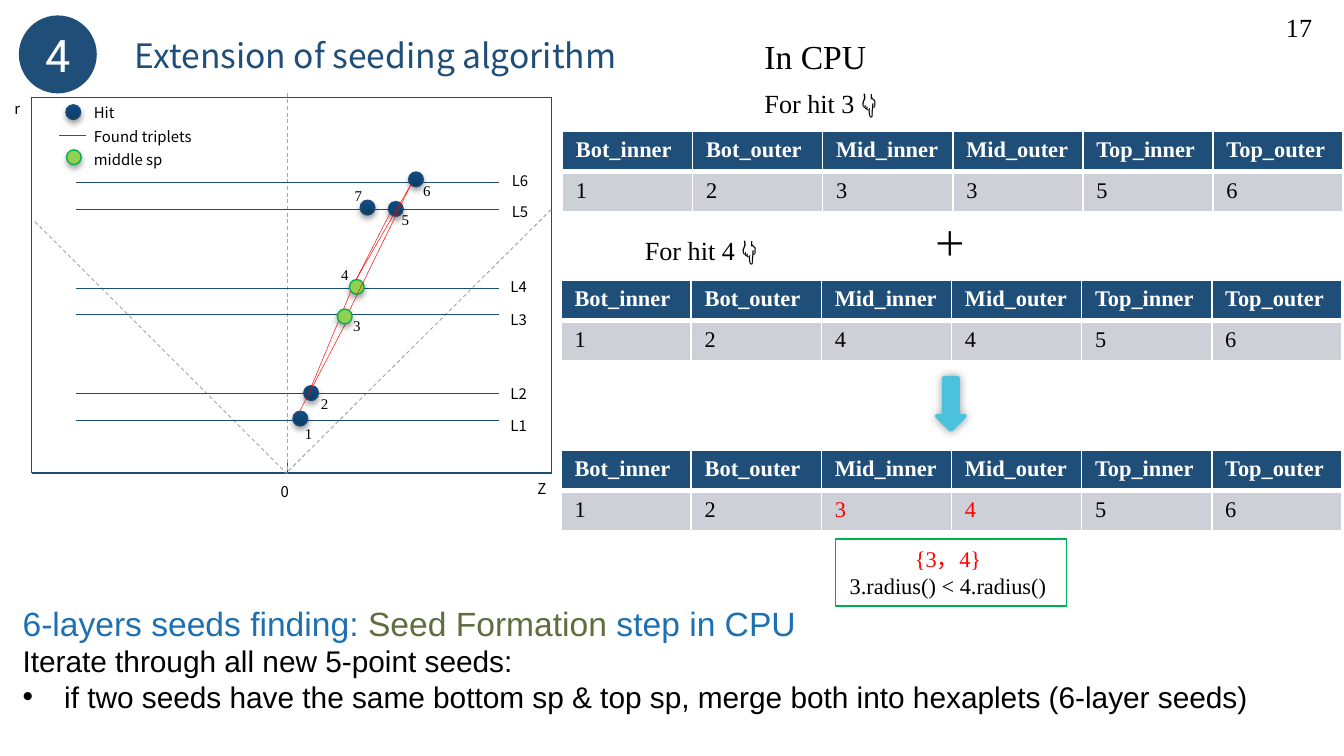
from dataclasses import dataclass

from lxml.etree import SubElement
from pptx import Presentation
from pptx.dml.color import RGBColor
from pptx.enum.dml import MSO_LINE
from pptx.enum.shapes import MSO_CONNECTOR, MSO_SHAPE
from pptx.enum.text import MSO_ANCHOR, MSO_AUTO_SIZE, PP_ALIGN
from pptx.oxml.ns import qn
from pptx.util import Inches, Pt


@dataclass(frozen=True)
class Theme:
    navy: str = "1F4E78"
    line: str = "1C4C78"
    hit_dark: str = "0D3B64"
    hit_light: str = "0F4D84"
    lime: str = "92D050"
    green: str = "00B050"
    red: str = "FF0000"
    grey: str = "A6A6A6"
    cell: str = "CDD0D6"
    cyan: str = "4BC1DD"
    blue: str = "1E70B1"
    olive: str = "606E3F"
    black: str = "000000"
    white: str = "FFFFFF"
    serif: str = "Times New Roman"
    sans: str = "Noto Sans CJK SC"
    body_font: str = "Arial"
    badge_font: str = "Roboto"
    tiny: float = 8
    table: float = 12
    note: float = 14
    body: float = 16
    title: float = 18
    badge: float = 24


THEME = Theme()

# A 16:9 slide of 100 columns; rows are as high as columns are wide.
COLUMNS = 100
ROWS = COLUMNS * 9 / 16
UNIT = Inches(10) / COLUMNS

# Layer: name, row of its line, column and row of its label
LAYERS = [("L1", 31.3, 37, 30.5), ("L2", 29.3, 37, 28.1), ("L3", 23.4, 37, 22.6),
          ("L4", 21.45, 37, 20.2), ("L5", 15.6, 37.1, 14.6), ("L6", 13.6, 37.1, 12.3)]
# Hit: number, column and row of the dot, column and row of the label, middle or not
HITS = [("2", 22.6, 28.7, 22.9, 28.9, False), ("4", 26, 20.8, 24.4, 19.3, True),
        ("5", 28.9, 15, 28.9, 15.2, False), ("6", 30.4, 12.8, 30.5, 13, False),
        ("1", 21.8, 30.6, 21.7, 31.1, False)]
FRONT_HITS = [("3", 25.1, 23, 25.3, 23.1, True), ("7", 26.8, 14.9, 25.4, 13.4, False)]
TRIPLETS = [(26, 23.1, 30.6, 13.7), (26.5, 20.8, 29, 15.9), (23.2, 28.7, 26.1, 21.7),
            (22.3, 30.6, 25.7, 24.1), (26.5, 20.8, 30.6, 13.7)]
HEADERS = ["Bot_inner", "Bot_outer", "Mid_inner", "Mid_outer", "Top_inner", "Top_outer"]


def grid(*cells):
    return [round(cell * UNIT) for cell in cells]


def rgb(color):
    return RGBColor.from_string(color)


def write(para, text, font=THEME.serif, size=THEME.tiny, color=THEME.black, bold=False):
    span = para.add_run()
    span.text = text
    span.font.name, span.font.size, span.font.bold = font, Pt(size), bold
    span.font.color.rgb = rgb(color)
    if font == THEME.sans:
        SubElement(span.font._element, qn("a:ea"), typeface=font)


def add_text(page, text, left, top, width, height, wrap=False, **style):
    box = page.shapes.add_textbox(*grid(left, top, width, height))
    box.text_frame.word_wrap = wrap
    box.text_frame.auto_size = MSO_AUTO_SIZE.SHAPE_TO_FIT_TEXT
    write(box.text_frame.paragraphs[0], text, **style)
    return box


def add_line(page, start_x, start_y, end_x, end_y, color=THEME.line, width=0.75, dashed=False):
    line = page.shapes.add_connector(MSO_CONNECTOR.STRAIGHT,
                                     *grid(start_x, start_y, end_x, end_y))
    line.line.color.rgb, line.line.width = rgb(color), Pt(width)
    if dashed:
        line.line.dash_style = MSO_LINE.DASH
    SubElement(line._element.spPr, qn("a:effectLst"))


def add_shape(page, kind, left, top, width, height, fill=None, outline=None, weight=0.75):
    shape = page.shapes.add_shape(kind, *grid(left, top, width, height))
    shape.shadow.inherit = False
    if fill:
        shape.fill.solid()
        shape.fill.fore_color.rgb = rgb(fill)
    else:
        shape.fill.background()
    if outline:
        shape.line.color.rgb, shape.line.width = rgb(outline), Pt(weight)
    else:
        shape.line.fill.background()
    return shape


def add_shadow(shape, blur, distance, opacity):
    effects = shape._element.spPr.find(qn("a:effectLst"))
    shadow = SubElement(effects, qn("a:outerShdw"), blurRad=str(Pt(blur)),
                        dist=str(Pt(distance)), dir="5400000", rotWithShape="0")
    color = SubElement(shadow, qn("a:srgbClr"), val=THEME.black)
    SubElement(color, qn("a:alpha"), val=str(opacity * 1000))


def add_dot(page, left, top, middle=False):
    dot = add_shape(page, MSO_SHAPE.OVAL, left, top, 1.1, 1.1, THEME.lime,
                    THEME.green if middle else THEME.line)
    if not middle:
        dot.fill.gradient()
        dot.fill.gradient_angle = 90
        for stop, color in zip(dot.fill.gradient_stops, (THEME.hit_dark, THEME.hit_light)):
            stop.color.rgb = rgb(color)
    add_shadow(dot, 3.1, 1.8, 35)


def add_hits(page, hits):
    for number, left, top, label_left, label_top, middle in hits:
        add_dot(page, left, top, middle)
        add_text(page, number, label_left, label_top, 2.6, 2.4)


def add_borders(cell, **weights):
    properties = cell._tc.get_or_add_tcPr()
    for side in "LRTB":
        line = SubElement(properties, qn(f"a:ln{side}"), w=str(Pt(weights.get(side, 1))))
        fill = SubElement(line, qn("a:solidFill"))
        SubElement(fill, qn("a:srgbClr"), val=THEME.white)


def add_seed_table(page, left, top, values, marked=()):
    frame = page.shapes.add_table(2, len(HEADERS), *grid(left, top, 58.1, 6))
    table = frame.table
    table.horz_banding = False
    for index, texts in enumerate(zip(HEADERS, values)):
        header, value = table.cell(0, index), table.cell(1, index)
        add_borders(header, B=3)
        add_borders(value, T=3)
        value_color = THEME.red if index in marked else THEME.black
        looks = [(THEME.navy, THEME.white, True), (THEME.cell, value_color, False)]
        for cell, text, (fill, color, bold) in zip((header, value), texts, looks):
            cell.fill.solid()
            cell.fill.fore_color.rgb = rgb(fill)
            write(cell.text_frame.paragraphs[0], text, size=THEME.table, color=color, bold=bold)


def add_heading(page):
    badge = add_shape(page, MSO_SHAPE.OVAL, 1.4, 1.15, 5.8, 5.8, THEME.navy)
    badge.text_frame.vertical_anchor = MSO_ANCHOR.MIDDLE
    para = badge.text_frame.paragraphs[0]
    para.alignment = PP_ALIGN.CENTER
    write(para, "4", font=THEME.badge_font, size=THEME.badge, color=THEME.white)
    add_text(page, "Extension of seeding algorithm", 9.05, 2.1, 39.6, 4,
             font=THEME.sans, size=THEME.title, color=THEME.navy)
    add_text(page, "17", 94.7, 0.35, 4.7, 2.6, wrap=True, size=THEME.note)


def add_detector(page):
    # Frame, axis tick and acceptance lines
    left, top, right, bottom = 2.35, 7.25, 41.05, 35.2
    for ends in [(left, bottom, right, bottom), (left, top, left, bottom),
                 (right, top, right, bottom), (left, top, right, top), (21.4, 34.4, 21.4, bottom)]:
        add_line(page, *ends)
    for start in [(21.4, 6.9, 21.4), (41, 15.6, 21.3), (2.6, 16.5, 21.3)]:
        add_line(page, *start, bottom, color=THEME.grey, width=0.5, dashed=True)
    # Layers
    for name, row, label_left, label_top in LAYERS:
        add_line(page, 5.65, row, 37.1, row)
        add_text(page, name, label_left, label_top, 3.3, 2.4, font=THEME.sans)
    # Axis names and legend
    for text, *place in [("Z", 39, 35.2, 2.7), ("r", 0.1, 6.9, 2.4), ("0", 19.9, 35.4, 2.7),
                         ("Hit", 6, 7.2, 3.6), ("Found triplets", 6, 9, 9.5),
                         ("middle sp", 6, 10.7, 7.3)]:
        add_text(page, text, *place, 2.4, font=THEME.sans)
    add_dot(page, 4.9, 7.8)
    add_line(page, 4.4, 10.1, 6.4, 10.1, color=THEME.red, width=0.25)
    add_dot(page, 4.95, 11.15, middle=True)
    # Hits and the triplets that join them
    add_hits(page, HITS)
    for ends in TRIPLETS:
        add_line(page, *ends, color=THEME.red, width=0.25)
    add_hits(page, FRONT_HITS)


def add_merge_steps(page):
    add_text(page, "In CPU", 55.9, 2.2, 9.7, 4, size=THEME.title)
    add_text(page, "For hit 3 👇", 55.9, 6, 16, 3.4, wrap=True, size=THEME.note)
    add_seed_table(page, 41.85, 9.75, "123356")
    add_text(page, "For hit 4 👇", 47, 16.95, 16, 3.4, wrap=True, size=THEME.note)
    add_text(page, "＋", 68.5, 16.1, 4.5, 4, font=THEME.sans, size=THEME.title)
    add_seed_table(page, 41.75, 20.85, "124456")
    arrow = add_shape(page, MSO_SHAPE.DOWN_ARROW, 69.7, 28.1, 2.1, 3.9, THEME.cyan, THEME.cyan, 2)
    add_shadow(arrow, 5, 0, 40)
    add_seed_table(page, 41.75, 33.5, "123456", marked=(2, 3))
    # Ordering rule
    rule = add_shape(page, MSO_SHAPE.RECTANGLE, 62.15, 40.1, 17.2, 5, outline=THEME.green)
    rule.text_frame.word_wrap = False
    lines = [("{3，4} ", THEME.red), ("3.radius() < 4.radius() ", THEME.black)]
    for index, (text, color) in enumerate(lines):
        para = rule.text_frame.add_paragraph() if index else rule.text_frame.paragraphs[0]
        para.alignment = PP_ALIGN.CENTER
        write(para, text, size=THEME.table, color=color)


def add_summary(page):
    heading = dict(font=THEME.body_font, size=THEME.title)
    body = dict(font=THEME.body_font, size=THEME.body)
    box = add_text(page, "6-layers seeds finding: ", 0.7, 44.35, 96, 9.4, wrap=True,
                   color=THEME.blue, **heading)
    first = box.text_frame.paragraphs[0]
    write(first, "Seed Formation", color=THEME.olive, **heading)
    write(first, " step in CPU", color=THEME.blue, **heading)
    write(box.text_frame.add_paragraph(), "Iterate through all new 5-point seeds:", **body)
    item = box.text_frame.add_paragraph()
    properties = item._p.get_or_add_pPr()
    indent = Inches(0.31)
    properties.set("marL", str(indent))
    properties.set("indent", str(-indent))
    SubElement(properties, qn("a:buFont"), typeface=THEME.body_font)
    SubElement(properties, qn("a:buChar"), char="•")
    write(item, "if two seeds have the same bottom sp & top sp, "
                "merge both into hexaplets (6-layer seeds)", **body)


def main():
    deck = Presentation()
    deck.slide_width, deck.slide_height = grid(COLUMNS, ROWS)
    page = deck.slides.add_slide(deck.slide_layouts[6])
    add_summary(page)
    add_detector(page)
    add_merge_steps(page)
    add_heading(page)
    deck.save("out.pptx")


if __name__ == "__main__":
    main()
